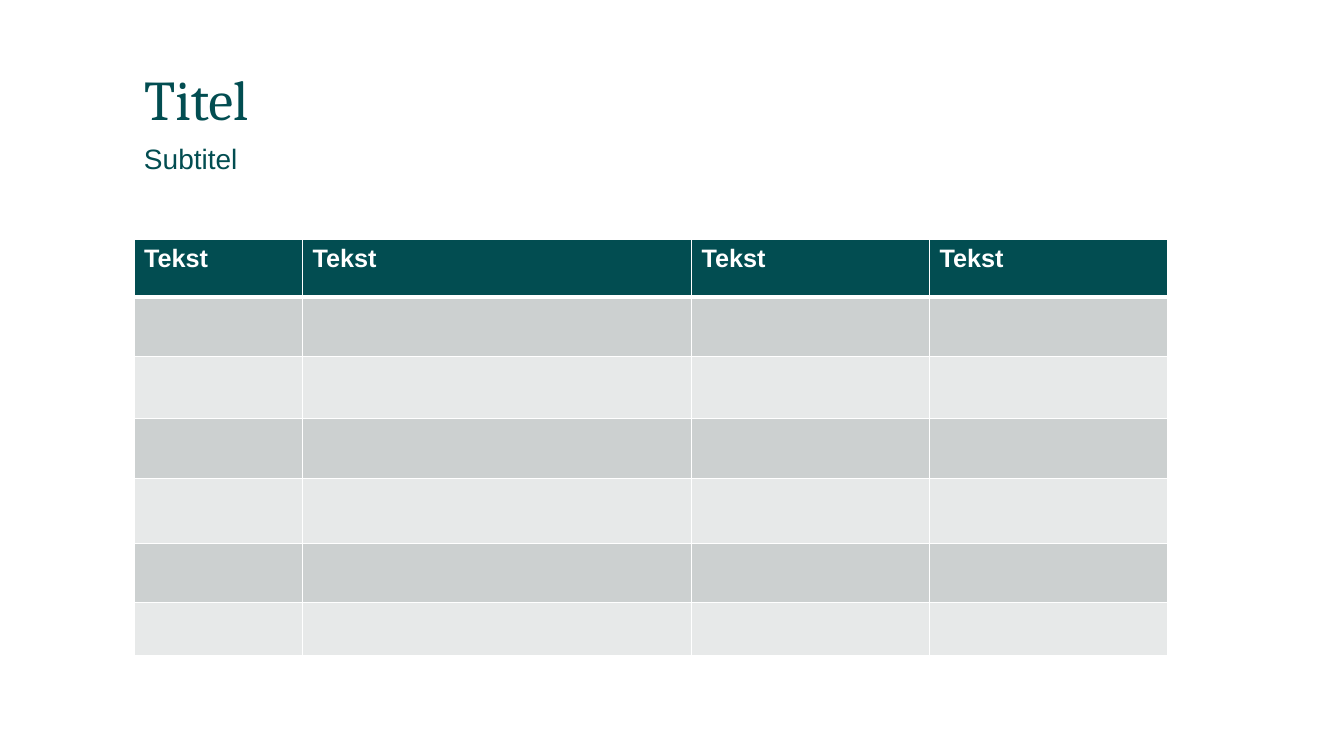
from lxml.etree import SubElement
from pptx import Presentation
from pptx.dml.color import RGBColor
from pptx.enum.text import MSO_ANCHOR, MSO_AUTO_SIZE, PP_ALIGN
from pptx.oxml.ns import qn
from pptx.util import Inches, Pt

TEAL = RGBColor(0x02, 0x4D, 0x51)
WHITE = RGBColor(0xFF, 0xFF, 0xFF)
GREY = RGBColor(0xCC, 0xD0, 0xD0)
LIGHT = RGBColor(0xE7, 0xE9, 0xE9)
COLS = [1.67, 3.86, 2.36, 2.36]
ROWS = [0.57, 0.59, 0.61, 0.6, 0.64, 0.59, 0.53]


def add_run(p, text, font, size, color, bold=False):
    """Add one formatted run to a paragraph."""
    r = p.add_run()
    r.text = text
    r.font.name, r.font.size, r.font.bold = font, Pt(size), bold
    r.font.color.rgb = color


def place_heading(sp, box, text, font, size):
    """Place a shape in its box and write a teal heading at the top."""
    sp.left, sp.top, sp.width, sp.height = (Inches(v) for v in box)
    tf = sp.text_frame
    tf.word_wrap = True
    tf.auto_size = MSO_AUTO_SIZE.NONE
    tf.vertical_anchor = MSO_ANCHOR.TOP
    p = tf.paragraphs[0]
    p.alignment = PP_ALIGN.LEFT
    p.line_spacing = 0.9
    p.space_before = Pt(0)
    add_run(p, text, font, size, TEAL)


def set_borders(cell, top, bottom):
    """Give a cell white borders, with top and bottom widths in points."""
    tcPr = cell._tc.get_or_add_tcPr()
    for side, width in (("L", 1), ("R", 1), ("T", top), ("B", bottom)):
        ln = SubElement(tcPr, qn(f"a:ln{side}"), w=str(Pt(width)))
        fill = SubElement(ln, qn("a:solidFill"))
        SubElement(fill, qn("a:srgbClr"), val=str(WHITE))


def add_banded_table(s, left, top):
    """Add the table with a teal header and banded grey rows."""
    frame = s.shapes.add_table(len(ROWS), len(COLS), Inches(left), Inches(top),
                               Inches(sum(COLS)), Inches(sum(ROWS)))
    table = frame.table
    for column, width in zip(table.columns, COLS):
        column.width = Inches(width)
    for i, (row, height) in enumerate(zip(table.rows, ROWS)):
        row.height = Inches(height)
        for cell in row.cells:
            set_borders(cell, 3 if i == 1 else 1, 3 if i == 0 else 1)
            cell.fill.solid()
            if i == 0:
                cell.fill.fore_color.rgb = TEAL
                add_run(cell.text_frame.paragraphs[0], "Tekst", "Arial", 18, WHITE, True)
            else:
                cell.fill.fore_color.rgb = GREY if i % 2 else LIGHT


def main():
    """Build the slide and save it."""
    prs = Presentation()
    prs.slide_width, prs.slide_height = Inches(13.33), Inches(7.5)
    s = prs.slides.add_slide(prs.slide_layouts[5])
    place_heading(s.shapes.title, (1.33, 0.67, 10.5, 1.45), "Titel", "Cambria", 40)
    add_banded_table(s, 1.33, 2.38)
    subtitle = s.shapes.add_textbox(0, 0, 0, 0)
    place_heading(subtitle, (1.33, 1.39, 10.5, 1.45), "Subtitel", "Arial", 20)
    prs.save("out.pptx")


if __name__ == "__main__":
    main()
